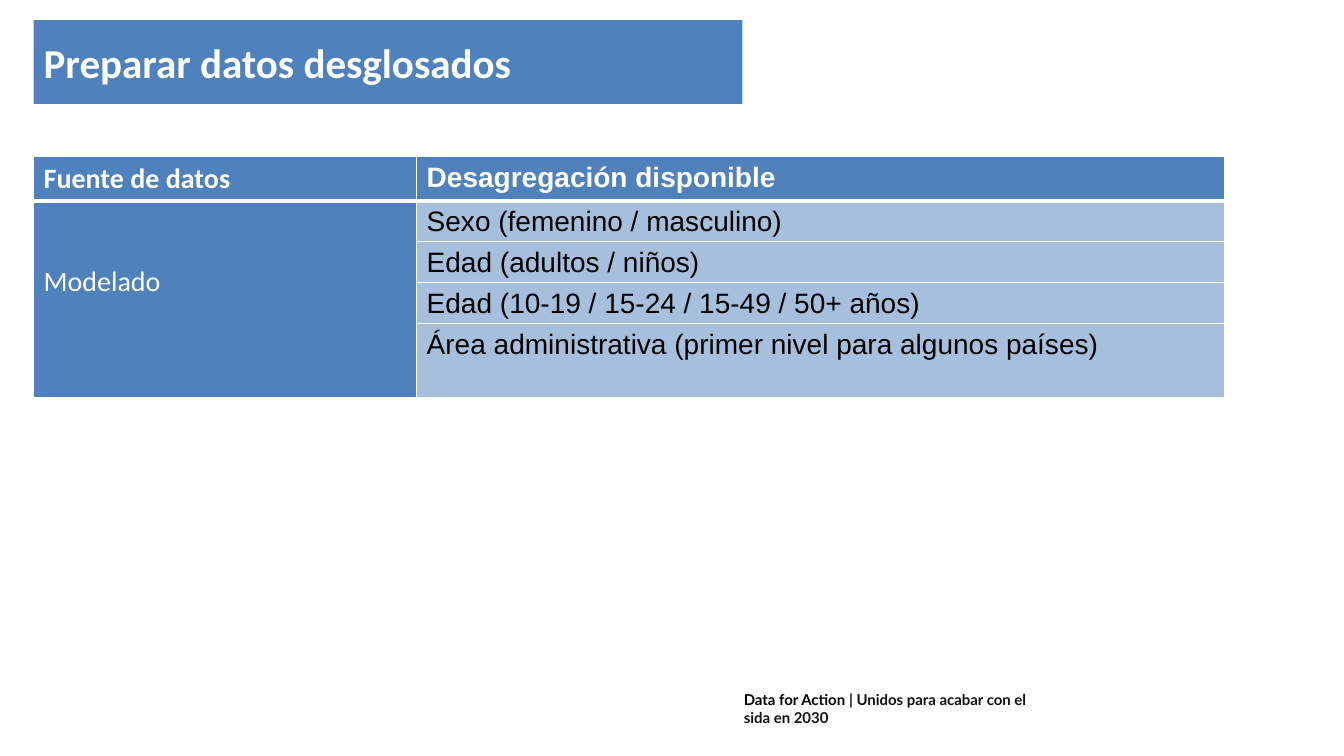
from dataclasses import dataclass

from lxml.etree import SubElement as Sub
from pptx import Presentation
from pptx.dml.color import RGBColor as Rgb
from pptx.enum.text import MSO_ANCHOR as Anchor, MSO_AUTO_SIZE as Auto, PP_ALIGN as Align
from pptx.oxml.ns import qn
from pptx.slide import Slide
from pptx.table import _Cell as Cell
from pptx.text.text import TextFrame
from pptx.util import Pt

HUES = {"blue": "4F81BD", "white": "FFFFFF", "black": "000000", "ink": "111111"}


@dataclass
class Run:
    text: str
    size: float
    font: str
    hue: str
    bold: bool = False


@dataclass
class Entry:
    row: int
    col: int
    run: Run
    anchor: Anchor = Anchor.TOP
    foot: float = 1.6


WIDTHS = [273.6, 577.4]
HEIGHTS = [31.5, 29.2, 29.2, 29.2, 52.5]
LEVELS = [
    "Sexo (femenino / masculino)",
    "Edad (adultos / niños)",
    "Edad (10-19 / 15-24 / 15-49 / 50+ años)",
    "Área administrativa (primer nivel para algunos países)",
]
ENTRIES = [
    Entry(0, 0, Run("Fuente de datos", 20, "Calibri", "white", True)),
    Entry(0, 1, Run("Desagregación disponible", 20, "Arial", "white", True)),
    Entry(1, 0, Run("Modelado", 20, "Calibri", "white"), Anchor.MIDDLE, 28),
] + [Entry(row, 1, Run(text, 20, "Arial", "black")) for row, text in enumerate(LEVELS, 1)]


def color(hue: str) -> Rgb:
    return Rgb.from_string(HUES[hue])


def write(frame: TextFrame, runs: list[Run]) -> None:
    para = frame.paragraphs[0]
    para.alignment = Align.LEFT
    for item in runs:
        run = para.add_run()
        run.text = item.text
        font = run.font
        font.size, font.name, font.bold = Pt(item.size), item.font, item.bold
        font.color.rgb = color(item.hue)


def paint(cell: Cell, pale: bool, head: bool) -> None:
    cell.fill.solid()
    cell.fill.fore_color.rgb = color("blue")
    props = cell._tc.get_or_add_tcPr()
    if pale:
        Sub(props.find(".//" + qn("a:srgbClr")), qn("a:alpha"), val="50000")
    for spot, side in enumerate(("L", "R", "T", "B")):
        thick = head and side == "B"
        line = Sub(props, qn(f"a:ln{side}"), w=str(Pt(3 if thick else 1)))
        fill = Sub(line, qn("a:solidFill"))
        Sub(fill, qn("a:srgbClr"), val=HUES["white"])
        props.insert(spot, line)


def add_title(slide: Slide) -> None:
    title = slide.shapes.title
    title.left, title.top, title.width, title.height = Pt(24), Pt(14.4), Pt(506.2), Pt(59.8)
    title.fill.solid()
    title.fill.fore_color.rgb = color("blue")
    frame = title.text_frame
    frame.auto_size, frame.vertical_anchor = Auto.NONE, Anchor.MIDDLE
    write(frame, [Run("Preparar datos desglosados", 29.3, "Calibri", "white", True)])


def add_grid(slide: Slide) -> None:
    grid = slide.shapes.add_table(
        len(HEIGHTS), len(WIDTHS), Pt(24), Pt(112), Pt(sum(WIDTHS)), Pt(sum(HEIGHTS))
    ).table
    for col, width in zip(grid.columns, WIDTHS):
        col.width = Pt(width)
    for row, height in enumerate(HEIGHTS):
        grid.rows[row].height = Pt(height)
        for col in range(len(WIDTHS)):
            paint(grid.cell(row, col), row > 0 and col > 0, row == 0)
    grid.cell(1, 0).merge(grid.cell(len(LEVELS), 0))
    for entry in ENTRIES:
        cell = grid.cell(entry.row, entry.col)
        cell.vertical_anchor, cell.margin_bottom = entry.anchor, Pt(entry.foot)
        write(cell.text_frame, [entry.run])


def add_footer(slide: Slide) -> None:
    box = slide.shapes.add_textbox(Pt(524.2), Pt(489.6), Pt(220.3), Pt(33))
    box.text_frame.word_wrap = True
    write(box.text_frame, [
        Run("Data for Action", 10.7, "Lato", "black", True),
        Run(" | Unidos para acabar con el sida en 2030", 10.7, "Lato", "ink", True),
    ])


def main() -> None:
    deck = Presentation()
    deck.slide_width, deck.slide_height = Pt(960), Pt(540)
    slide = deck.slides.add_slide(deck.slide_layouts[5])
    add_footer(slide)
    add_title(slide)
    add_grid(slide)
    deck.save("out.pptx")


if __name__ == "__main__":
    main()
